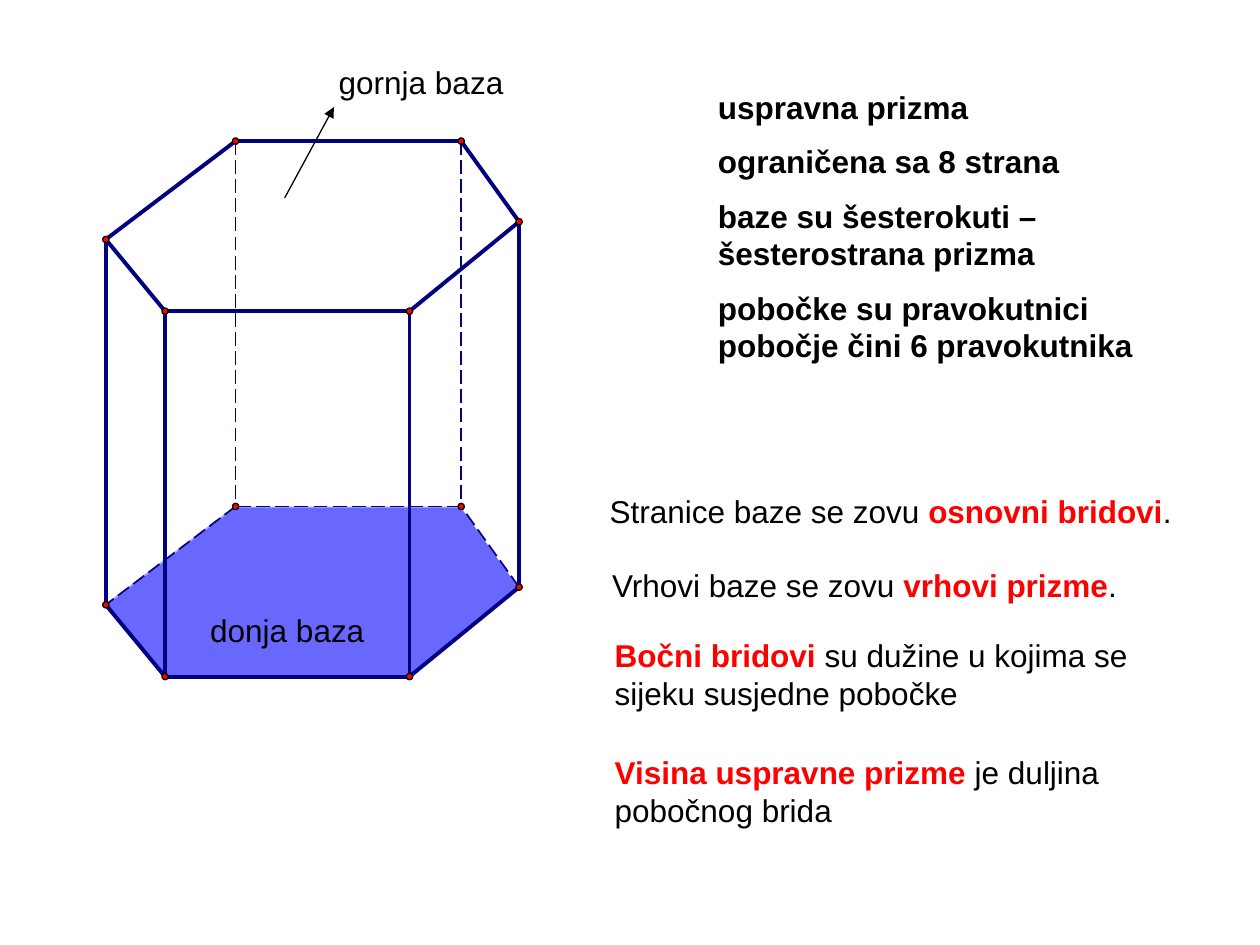
from dataclasses import dataclass

from lxml.etree import SubElement
from pptx import Presentation
from pptx.dml.color import RGBColor
from pptx.enum.dml import MSO_LINE
from pptx.enum.shapes import MSO_CONNECTOR, MSO_SHAPE
from pptx.enum.text import MSO_AUTO_SIZE
from pptx.oxml.ns import qn
from pptx.util import Inches, Pt


@dataclass(frozen=True)
class Theme:
    """Colours, type and line widths of the slide."""
    ink: RGBColor = RGBColor(0, 0, 0)
    key: RGBColor = RGBColor(255, 0, 0)
    edge: RGBColor = RGBColor(0, 0, 128)
    base: RGBColor = RGBColor(0, 0, 255)
    base_alpha: int = 36000
    font: str = "Arial"
    size: Pt = Pt(18)
    gap: Pt = Pt(9.4)
    solid: Pt = Pt(2.25)
    dashed: Pt = Pt(1)
    thin: Pt = Pt(0.75)


THEME = Theme()
COLS, ROWS = 100, 75
CELL = Inches(10) // COLS
FACE = [(4.7, 13.5), (24.1, 13.5), (32.8, 6.4), (28.2, 0), (10.3, 0), (0, 7.8)]
HIDDEN_BASE = {2, 3, 4}
HIDDEN_SIDES = {3, 4}


def cells(*values):
    """Convert grid cells to slide lengths."""
    return [round(v * CELL) for v in values]


def set_attrs(obj, values):
    """Set the attributes of obj from a dict."""
    for name, value in values.items():
        setattr(obj, name, value)


def add_line(s, start, end, color, width, dash=None):
    """Draw a straight line between two grid points."""
    sp = s.shapes.add_connector(MSO_CONNECTOR.STRAIGHT, *cells(*start, *end))
    sp.line.color.rgb = color
    set_attrs(sp.line, {"width": width, "dash_style": dash})
    SubElement(sp._element.spPr, qn("a:effectLst"))
    return sp


def add_arrow(s, start, end):
    """Draw a thin line with an arrowhead at its end."""
    sp = add_line(s, start, end, THEME.ink, THEME.thin)
    SubElement(sp.line._get_or_add_ln(), qn("a:tailEnd"), type="triangle")


def add_base(s, points):
    """Draw one translucent layer of the base."""
    pts = [cells(*pt) for pt in points]
    fb = s.shapes.build_freeform(*pts[0])
    fb.add_line_segments(pts[1:], close=True)
    sp = fb.convert_to_shape()
    sp.shadow.inherit = False
    sp.line.fill.background()
    sp.fill.solid()
    sp.fill.fore_color.rgb = THEME.base
    color = sp._element.spPr.find(".//" + qn("a:srgbClr"))
    SubElement(color, qn("a:alpha"), val=str(THEME.base_alpha))


def add_vertex(s, point, size=0.5):
    """Mark a vertex with a dot centred on a grid point."""
    x, y = point
    sp = s.shapes.add_shape(MSO_SHAPE.OVAL, *cells(x - size / 2, y - size / 2, size, size))
    sp.shadow.inherit = False
    sp.fill.solid()
    sp.fill.fore_color.rgb = THEME.key
    sp.line.color.rgb = THEME.ink
    sp.line.width = Pt(0)


def add_edge(s, start, end, hidden):
    """Draw a visible or a hidden edge of the prism."""
    style = (THEME.dashed, MSO_LINE.LONG_DASH) if hidden else (THEME.solid,)
    add_line(s, start, end, THEME.edge, *style)


def add_prism(s, box):
    """Draw the hexagonal prism inside a box of grid cells."""
    left, top, width, height = box
    face_w, face_h = (max(axis) for axis in zip(*FACE))
    scale = width / face_w
    upper = [(left + x * scale, top + y * scale) for x, y in FACE]
    rise = height - face_h * scale
    lower = [(x, y + rise) for x, y in upper]
    for dx in (-0.1, 0):
        add_base(s, [(x + dx, y + 0.1 + dx) for x, y in lower])
    for i in range(len(FACE)):
        j = (i + 1) % len(FACE)
        add_edge(s, lower[i], lower[j], i in HIDDEN_BASE)
        add_edge(s, upper[i], upper[j], False)
        add_edge(s, upper[i], lower[i], i in HIDDEN_SIDES)
    for point in upper + lower:
        add_vertex(s, point)


def add_text(s, box, paragraphs, bold=False):
    """Write paragraphs of (text, is_key) runs in a box of grid cells."""
    tf = s.shapes.add_textbox(*cells(*box)).text_frame
    set_attrs(tf, {"word_wrap": True, "auto_size": MSO_AUTO_SIZE.SHAPE_TO_FIT_TEXT})
    for i, runs in enumerate(paragraphs):
        p = tf.add_paragraph() if i else tf.paragraphs[0]
        if i:
            p.space_before = THEME.gap
        for text, is_key in runs:
            r = p.add_run()
            r.text = text
            set_attrs(r.font, {"name": THEME.font, "size": THEME.size, "bold": bold or is_key})
            r.font.color.rgb = THEME.key if is_key else THEME.ink


def add_properties(s, box):
    """List the properties of the prism in bold."""
    lines = [
        "uspravna prizma",
        "ograničena sa 8 strana",
        "baze su šesterokuti – šesterostrana prizma",
        "pobočke su pravokutnici pobočje čini 6 pravokutnika",
    ]
    add_text(s, box, [[(line, False)] for line in lines], bold=True)


def add_definitions(s, box):
    """Place the definitions by their offsets within the box."""
    left, top, width, height = box
    definitions = [
        (0, 0, 48.6, 4, [("Stranice baze se zovu ", False), ("osnovni bridovi", True), (".", False)]),
        (0.2, 5.8, 47.3, 4, [("Vrhovi baze se zovu ", False), ("vrhovi prizme", True), (".", False)]),
        (0.4, 11.4, 46.2, 7, [("Bočni bridovi", True), (" su dužine u kojima se sijeku susjedne pobočke", False)]),
        (0.4, 20.7, 47.1, 7, [("Visina uspravne prizme", True), (" je duljina pobočnog brida", False)]),
    ]
    for dx, dy, w, h, runs in definitions:
        add_text(s, (left + dx, top + dy, min(w, width), min(h, height)), [runs])


def add_labels(s, box):
    """Name both bases and point to the upper one."""
    left, top, width, height = box
    for dx, dy, text in [(0, 43.5, "donja baza"), (10.2, 0, "gornja baza")]:
        add_text(s, (left + dx, top + dy, width, height), [[(text, False)]])
    add_arrow(s, (left + 6.9, top + 11.2), (left + 10.8, top + 4))


def main():
    """Build and save the slide."""
    prs = Presentation()
    set_attrs(prs, {"slide_width": COLS * CELL, "slide_height": ROWS * CELL})
    s = prs.slides.add_slide(prs.slide_layouts[6])
    add_prism(s, (8.4, 11.2, 32.8, 42.5))
    add_properties(s, (56, 6.5, 37.4, 23.6))
    add_definitions(s, (47.4, 38.6, 48.6, 27.7))
    add_labels(s, (15.7, 4.5, 16.6, 4))
    prs.save("out.pptx")


if __name__ == "__main__":
    main()
